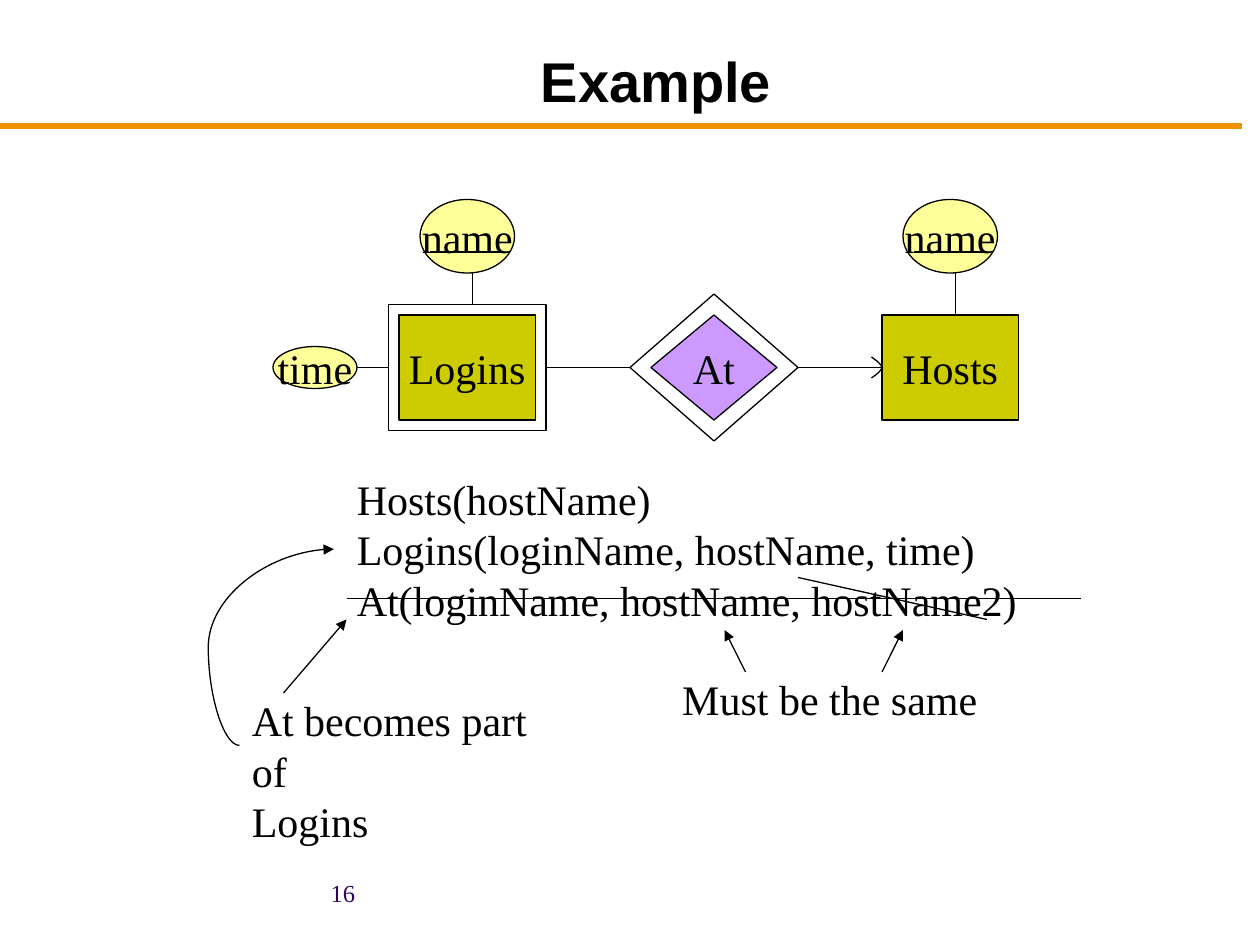
"""Build the Logins-At-Hosts entity-relationship example slide."""
from lxml import etree
from pptx import Presentation, util as u
from pptx.dml.color import RGBColor
from pptx.enum import shapes, text
from pptx.oxml.ns import qn

COLS, ROWS = 120, 90
CELL = u.Inches(10) // COLS
BLACK = RGBColor(0x00, 0x00, 0x00)
ORANGE = RGBColor(0xEF, 0x91, 0x00)
PURPLE = RGBColor(0x33, 0x00, 0x66)
OLIVE = RGBColor(0xCC, 0xCC, 0x00)
LILAC = RGBColor(0xCC, 0x99, 0xFF)
YELLOW = RGBColor(0xFF, 0xFF, 0x99)
SERIF, SANS = "Times New Roman", "Arial"
RECT, DIAMOND, OVAL = (shapes.MSO_SHAPE.RECTANGLE, shapes.MSO_SHAPE.DIAMOND,
                       shapes.MSO_SHAPE.OVAL)
STRAIGHT, CURVE = shapes.MSO_CONNECTOR.STRAIGHT, shapes.MSO_CONNECTOR.CURVE
LEFT, CENTER, RIGHT = text.PP_ALIGN.LEFT, text.PP_ALIGN.CENTER, text.PP_ALIGN.RIGHT


def grid(*cells):
    """Turn grid cells into slide lengths."""
    return [round(c * CELL) for c in cells]


def write(tf, lines, align=LEFT, size=24, font=SERIF, color=BLACK, bold=False):
    """Write one paragraph with one run per line of text."""
    for i, line in enumerate(lines):
        p = tf.paragraphs[0] if i == 0 else tf.add_paragraph()
        p.alignment = align
        r = p.add_run()
        r.text = line
        r.font.size, r.font.name, r.font.bold = u.Pt(size), font, bold
        r.font.color.rgb = color


def add_label(s, box, lines, wrap=False, anchor=text.MSO_ANCHOR.TOP, **style):
    """Add a text box; unwrapped ones fit their text."""
    tf = s.shapes.add_textbox(*grid(*box)).text_frame
    tf.word_wrap = wrap
    if not wrap:
        tf.auto_size = text.MSO_AUTO_SIZE.SHAPE_TO_FIT_TEXT
    tf.vertical_anchor = anchor
    write(tf, lines, **style)


def outline(sp, color=BLACK, width=0.75):
    """Give a shape or connector a plain line."""
    sp.line.color.rgb = color
    sp.line.width = u.Pt(width)


def add_node(s, kind, box, fill=None, name=None):
    """Add a diagram node, hollow when it has no fill."""
    sp = s.shapes.add_shape(kind, *grid(*box))
    sp.shadow.inherit = False
    outline(sp)
    if fill is None:
        sp.fill.background()
    else:
        sp.fill.solid()
        sp.fill.fore_color.rgb = fill
    if name:
        tf = sp.text_frame
        tf.word_wrap = False
        tf.vertical_anchor = text.MSO_ANCHOR.MIDDLE
        write(tf, [name], align=CENTER)


def add_line(s, ends, kind=STRAIGHT, arrow=False, **style):
    """Add a connector, with an arrowhead at its end on request."""
    sp = s.shapes.add_connector(kind, *grid(*ends))
    outline(sp, **style)
    if arrow:
        etree.SubElement(sp.line._get_or_add_ln(), qn("a:tailEnd"), type="triangle")
    etree.SubElement(sp._element.spPr, qn("a:effectLst"))
    return sp


def add_bulging_arrow(s, ends, bulge):
    """Add a curved arrow that swings out beyond its start."""
    sp = add_line(s, ends, kind=CURVE, arrow=True)
    geom = sp._element.spPr.find(qn("a:prstGeom"))
    guides = geom.find(qn("a:avLst"))
    if guides is None:
        guides = etree.SubElement(geom, qn("a:avLst"))
    etree.SubElement(guides, qn("a:gd"), name="adj1", fmla=f"val {round(bulge * 100000)}")


def add_round_head(s, tip_x, tip_y, steps=16):
    """Add the rounded arrowhead that marks exactly one."""
    ts = [i / steps * 2 - 1 for i in range(steps + 1)]
    points = [grid(tip_x - abs(t) ** 1.5, tip_y + t) for t in ts]
    fb = s.shapes.build_freeform(*points[0])
    fb.add_line_segments(points[1:], close=False)
    sp = fb.convert_to_shape()
    sp.shadow.inherit = False
    sp.fill.background()
    outline(sp)


def add_frame(s):
    """Add the title, its rule and the page number."""
    add_line(s, (0, 12, 118.3, 12), color=ORANGE, width=3)
    add_label(s, (13, 3, 99, 8.4), ["Example"], wrap=True,
              anchor=text.MSO_ANCHOR.BOTTOM, align=CENTER, size=32, font=SANS, bold=True)
    add_label(s, (9, 83, 26, 4.8), ["16"], wrap=True, align=RIGHT, size=14, color=PURPLE)


def add_diagram(s):
    """Add the entities, relationship, attributes and their links."""
    for x, name in ((38, "Logins"), (84, "Hosts")):
        add_node(s, RECT, (x, 30, 13, 10), OLIVE, name)
        add_node(s, OVAL, (x + 2, 19, 9, 7), YELLOW, "name")
        add_line(s, (x + 3, 24, x + 10, 24))
    add_node(s, DIAMOND, (62, 30, 12, 10), LILAC, "At")
    add_node(s, OVAL, (26, 33, 8, 4), YELLOW, "time")
    add_node(s, RECT, (37, 29, 15, 12))
    add_node(s, DIAMOND, (60, 28, 16, 14))
    for ends in ((45, 26, 45, 29), (91, 26, 91, 30), (34, 35, 37, 35),
                 (60, 35, 52, 35), (76, 35, 84, 35)):
        add_line(s, ends)
    add_round_head(s, 84, 35)


def add_relations(s):
    """Add the relation schemas, the remarks and the strike-outs."""
    add_label(s, (32.8, 44.5, 65.3, 15.6),
              ["Hosts(hostName)", "Logins(loginName, hostName, time)",
               "At(loginName, hostName, hostName2)"])
    add_label(s, (63.8, 63.6, 30.5, 6), ["Must be the same"])
    add_label(s, (22.8, 65.6, 32.9, 10.8), ["At becomes part of", "Logins"])
    for ends in ((71, 64, 69, 60), (84, 64, 86, 60), (27, 66, 33, 59)):
        add_line(s, ends, arrow=True)
    add_bulging_arrow(s, (22.8, 71, 31.8, 52.3), -0.33)
    for ends in ((76, 55, 94, 59), (33, 57, 103, 57)):
        add_line(s, ends)


def main():
    """Build and save the slide."""
    prs = Presentation()
    prs.slide_width, prs.slide_height = grid(COLS, ROWS)
    s = prs.slides.add_slide(prs.slide_layouts[6])
    add_frame(s)
    add_diagram(s)
    add_relations(s)
    prs.save("out.pptx")


if __name__ == "__main__":
    main()
